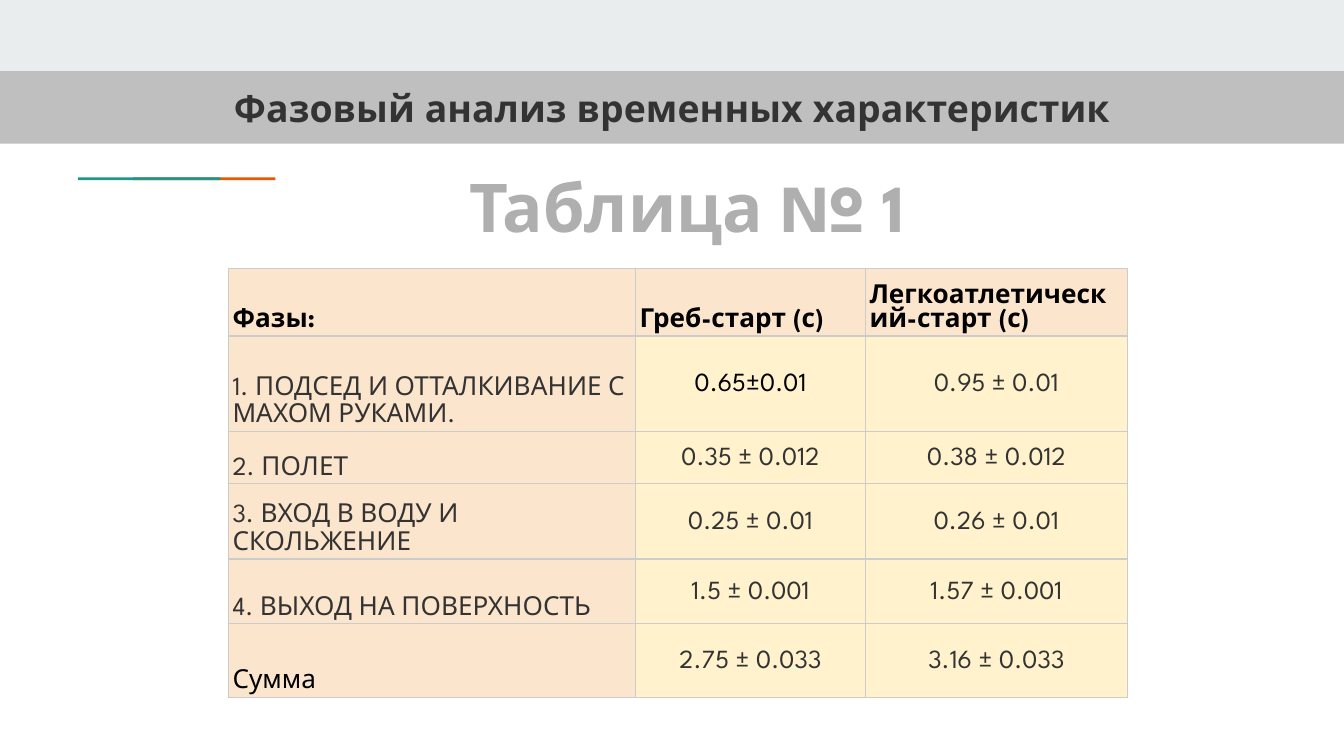
from lxml.etree import SubElement
from pptx import Presentation
from pptx.dml.color import RGBColor
from pptx.enum.shapes import MSO_SHAPE as Shape
from pptx.enum.text import MSO_ANCHOR as Anchor, MSO_AUTO_SIZE as AutoSize, PP_ALIGN as Align
from pptx.oxml.ns import qn
from pptx.util import Inches, Pt

SLIDE_WIDTH = 10
SLIDE_HEIGHT = SLIDE_WIDTH * 9 / 16
FONT = "League Spartan"
HEADING = "Фазовый анализ временных характеристик"
CAPTION = "Таблица № 1"
HEADERS = ("Фазы:", "Греб-старт (с)", "Легкоатлетический-старт (с)")
PHASES = [
    ("1. ПОДСЕД И ОТТАЛКИВАНИЕ С МАХОМ РУКАМИ.", "0.65±0.01", "0.95 ± 0.01"),
    ("2. ПОЛЕТ", "0.35 ± 0.012", "0.38 ± 0.012"),
    ("3. ВХОД В ВОДУ И СКОЛЬЖЕНИЕ", "0.25 ± 0.01", "0.26 ± 0.01"),
    ("4. ВЫХОД НА ПОВЕРХНОСТЬ", "1.5 ± 0.001", "1.57 ± 0.001"),
]
TOTAL = ("Сумма", "2.75 ± 0.033", "3.16 ± 0.033")
COLUMN_WIDTHS = (3.03, 1.71, 1.95)
ROW_HEIGHTS = (0.5, 0.71, 0.39, 0.56, 0.48, 0.55)
BLACK, DARK = "000000", "333333"
PEACH, CREAM, BORDER = "FCE5CD", "FFF2CC", "CCCCCC"
BANDS = [
    (0, 0, SLIDE_WIDTH, 0.53, "E9EDEE"),
    (0.99, 1.32, 1.06, 0.02, "EB5600"),
    (0.58, 1.32, 1.06, 0.02, "1A9988"),
]


def rgb(value):
    return RGBColor.from_string(value)


def add_band(slide, left, top, width, height, color):
    band = slide.shapes.add_shape(Shape.RECTANGLE, *map(Inches, (left, top, width, height)))
    band.shadow.inherit = False
    band.fill.solid()
    band.fill.fore_color.rgb = rgb(color)
    band.line.fill.background()
    return band


def write(frame, text, size, color, bold=False, align=Align.LEFT):
    paragraph = frame.paragraphs[0]
    paragraph.text = text
    paragraph.alignment = align
    font = paragraph.font
    font.name, font.size, font.bold = FONT, Pt(size), bold
    font.color.rgb = rgb(color)
    return paragraph


def add_borders(cell):
    properties = cell._tc.get_or_add_tcPr()
    for index, side in enumerate(("a:lnL", "a:lnR", "a:lnT", "a:lnB")):
        line = properties.makeelement(qn(side), {"w": str(Pt(0.83))})
        SubElement(SubElement(line, qn("a:solidFill")), qn("a:srgbClr"), val=BORDER)
        properties.insert(index, line)


def fill_cell(cell, text, row, column):
    is_header, is_total, is_value = row == 0, text == TOTAL[0], row > 0 and column > 0
    side = Inches(0.02 if is_value else 0.03)
    cell.margin_left = cell.margin_right = side
    cell.margin_top = cell.margin_bottom = Inches(0.02)
    cell.vertical_anchor = Anchor.MIDDLE if is_value else Anchor.BOTTOM
    cell.fill.solid()
    cell.fill.fore_color.rgb = rgb(CREAM if is_value else PEACH)
    color = BLACK if is_header or is_total or (row, column) == (1, 1) else DARK
    align = Align.CENTER if is_value else Align.LEFT
    paragraph = write(cell.text_frame, text, 14, color, is_header, align)
    if not is_header and not is_total:
        paragraph.line_spacing = 1.15
        if not is_value:
            paragraph.space_after = Pt(12)
    add_borders(cell)


def add_phase_table(slide):
    rows = [HEADERS, *PHASES, TOTAL]
    table = slide.shapes.add_table(
        len(rows), len(HEADERS), Inches(1.7), Inches(2),
        Inches(sum(COLUMN_WIDTHS)), Inches(sum(ROW_HEIGHTS)),
    ).table
    table.first_row = table.horz_banding = False
    for column, width in zip(table.columns, COLUMN_WIDTHS):
        column.width = Inches(width)
    for row, height in zip(table.rows, ROW_HEIGHTS):
        row.height = Inches(height)
    for r, texts in enumerate(rows):
        for c, text in enumerate(texts):
            fill_cell(table.cell(r, c), text, r, c)


def main():
    deck = Presentation()
    deck.slide_width, deck.slide_height = Inches(SLIDE_WIDTH), Inches(SLIDE_HEIGHT)
    slide = deck.slides.add_slide(deck.slide_layouts[6])
    for band in BANDS:
        add_band(slide, *band)
    add_phase_table(slide)

    heading = add_band(slide, 0, 0.53, SLIDE_WIDTH, 0.54, "BFBFBF").text_frame
    heading.margin_left = heading.margin_right = Inches(0.1)
    heading.margin_top = heading.margin_bottom = Inches(0.1)
    heading.vertical_anchor = Anchor.MIDDLE
    write(heading, HEADING, 20, DARK, True, Align.CENTER)

    caption = slide.shapes.add_textbox(
        Inches(3.38), Inches(1.18), Inches(3.46), Inches(0.71)).text_frame
    caption.word_wrap = False
    caption.auto_size = AutoSize.SHAPE_TO_FIT_TEXT
    write(caption, CAPTION, 36, "AFAFAF", True, Align.CENTER)
    deck.save("out.pptx")


if __name__ == "__main__":
    main()
